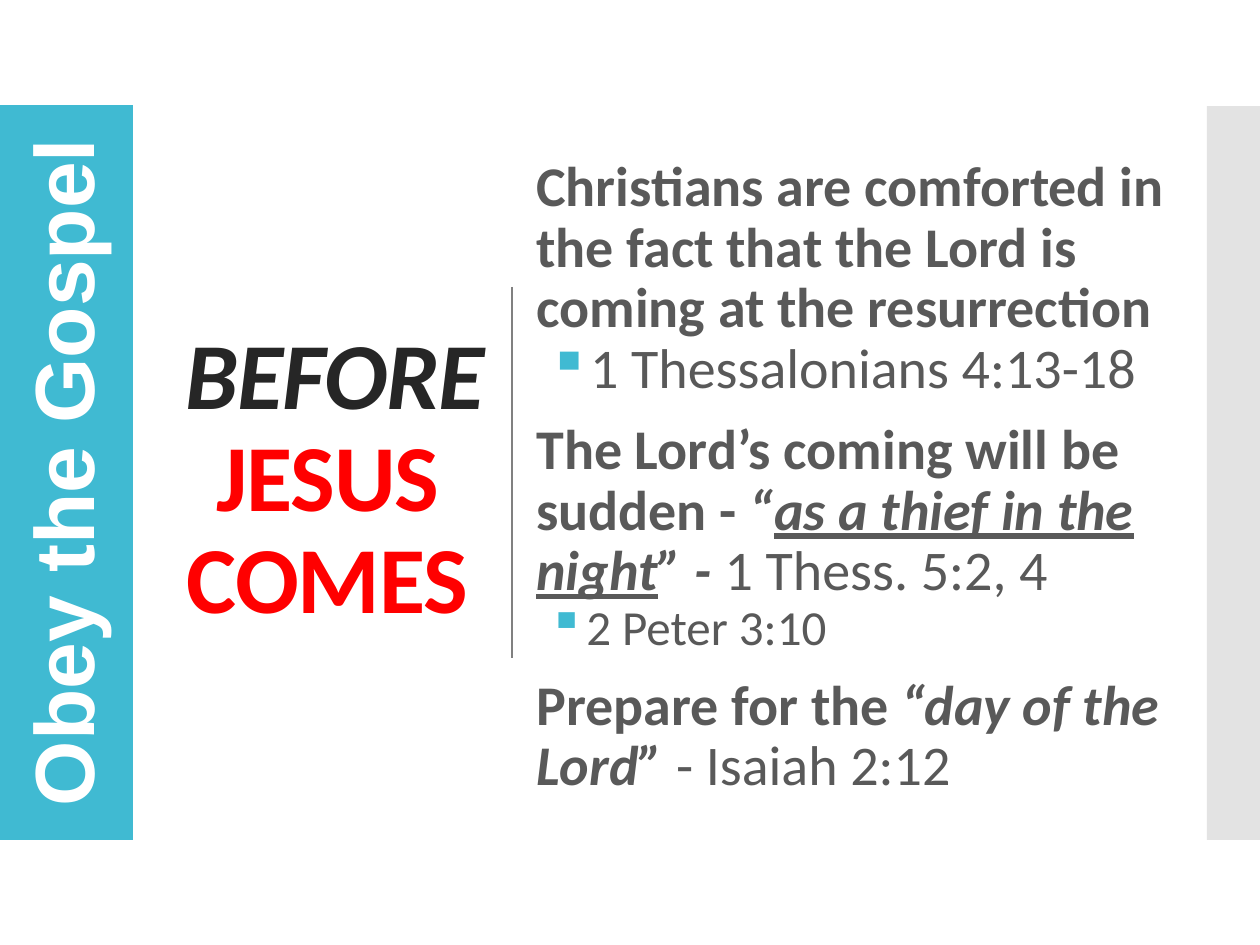
from lxml import etree
from pptx import Presentation
from pptx.dml.color import RGBColor
from pptx.enum.shapes import MSO_CONNECTOR as Connector, MSO_SHAPE as Shape
from pptx.enum.text import MSO_ANCHOR as Anchor, PP_ALIGN as Align
from pptx.oxml.ns import qn
from pptx.util import Emu, Pt

SCALE = 914400 / 126  # EMU per px
THEME = {
    "teal": "40BAD2", "gray": "C8C8C8", "rule": "808080", "white": "FFFFFF",
    "dark": "262626", "red": "FF0000", "text": "595959",
    "font": "Calibri", "banner_font": "Arial",
    "title": 54, "title_lead": 40, "body": 32, "small": 28, "banner": 48,
}


def px(*lengths):
    return [Emu(round(length * SCALE)) for length in lengths]


def add_run(paragraph, text, size, color, style="b", font="font"):
    run = paragraph.add_run()
    run.text = text
    run.font.name = THEME[font]
    run.font.size = Pt(THEME[size])
    run.font.color.rgb = RGBColor.from_string(THEME[color])
    run.font.bold = "b" in style
    run.font.italic = "i" in style
    run.font.underline = "u" in style
    return run


presentation = Presentation()
presentation.slide_width, presentation.slide_height = px(1260, 945)
slide = presentation.slides.add_slide(presentation.slide_layouts[6])

# Side bands: teal on the left, half-transparent gray on the right
for left, top, width, height, color, alpha in [
    (0, 105, 133, 735, "teal", 100),
    (1207, 106, 53, 734, "gray", 50),
]:
    band = slide.shapes.add_shape(Shape.RECTANGLE, *px(left, top, width, height))
    band.shadow.inherit = False
    band.line.fill.background()
    band.fill.solid()
    band.fill.fore_color.rgb = RGBColor.from_string(THEME[color])
    if alpha < 100:
        fill_color = band._element.spPr.find(qn("a:solidFill"))[0]
        etree.SubElement(fill_color, qn("a:alpha"), val=str(alpha * 1000))

# Title
title = slide.shapes.add_textbox(*px(146, 212, 363, 538)).text_frame
title.word_wrap = True
title.vertical_anchor = Anchor.MIDDLE
paragraph = title.paragraphs[0]
paragraph.alignment = Align.CENTER
paragraph.line_spacing = 0.9
add_run(paragraph, " ", "title_lead", "dark")
add_run(paragraph, "BEFORE", "title", "dark", "bi")
paragraph.add_line_break()
add_run(paragraph, "JESUS COMES", "title", "red")
for run in paragraph.runs:
    run.font._element.set("spc", "-60")

# Divider
divider = slide.shapes.add_connector(Connector.STRAIGHT, *px(512, 287, 512, 658))
divider.line.color.rgb = RGBColor.from_string(THEME["rule"])
divider.line.width = Pt(1)
etree.SubElement(divider._element.spPr, qn("a:effectLst"))

# Body: (is a bullet, size, runs of text and style)
POINTS = [
    (False, "body", [("Christians are comforted in the fact that the Lord is "
                      "coming at the resurrection", "b")]),
    (True, "body", [("1 Thessalonians 4:13-18", "")]),
    (False, "body", [("The Lord’s coming will be sudden - ", "b"), ("“", "bi"),
                     ("as a thief in the night", "biu"), ("” - ", "bi"),
                     ("1 Thess. 5:2, 4", "")]),
    (True, "small", [("2 Peter 3:10", "")]),
    (False, "body", [("Prepare for the ", "b"), ("“day of the Lord” ", "bi"),
                     ("- Isaiah 2:12", "")]),
]
body = slide.shapes.add_textbox(*px(524, 152, 682, 702)).text_frame
body.word_wrap = True
for index, (is_bullet, size, runs) in enumerate(POINTS):
    paragraph = body.add_paragraph() if index else body.paragraphs[0]
    paragraph.line_spacing = 0.9
    paragraph.space_before = Pt(0 if is_bullet else 12)
    if is_bullet:
        properties = paragraph._p.get_or_add_pPr()
        indent, hanging = px(50, -38)
        properties.set("marL", str(indent))
        properties.set("indent", str(hanging))
        bullet_color = etree.SubElement(properties, qn("a:buClr"))
        etree.SubElement(bullet_color, qn("a:srgbClr"), val=THEME["teal"])
        etree.SubElement(properties, qn("a:buChar"), char="▪")
    for text, style in runs:
        add_run(paragraph, text, size, "text", style)

# Vertical banner text
banner = slide.shapes.add_textbox(*px(-289, 415, 701, 115))
banner.rotation = 270
banner.text_frame.word_wrap = False
paragraph = banner.text_frame.paragraphs[0]
paragraph.alignment = Align.CENTER
add_run(paragraph, "Obey the Gospel", "banner", "white", font="banner_font")

presentation.save("out.pptx")
